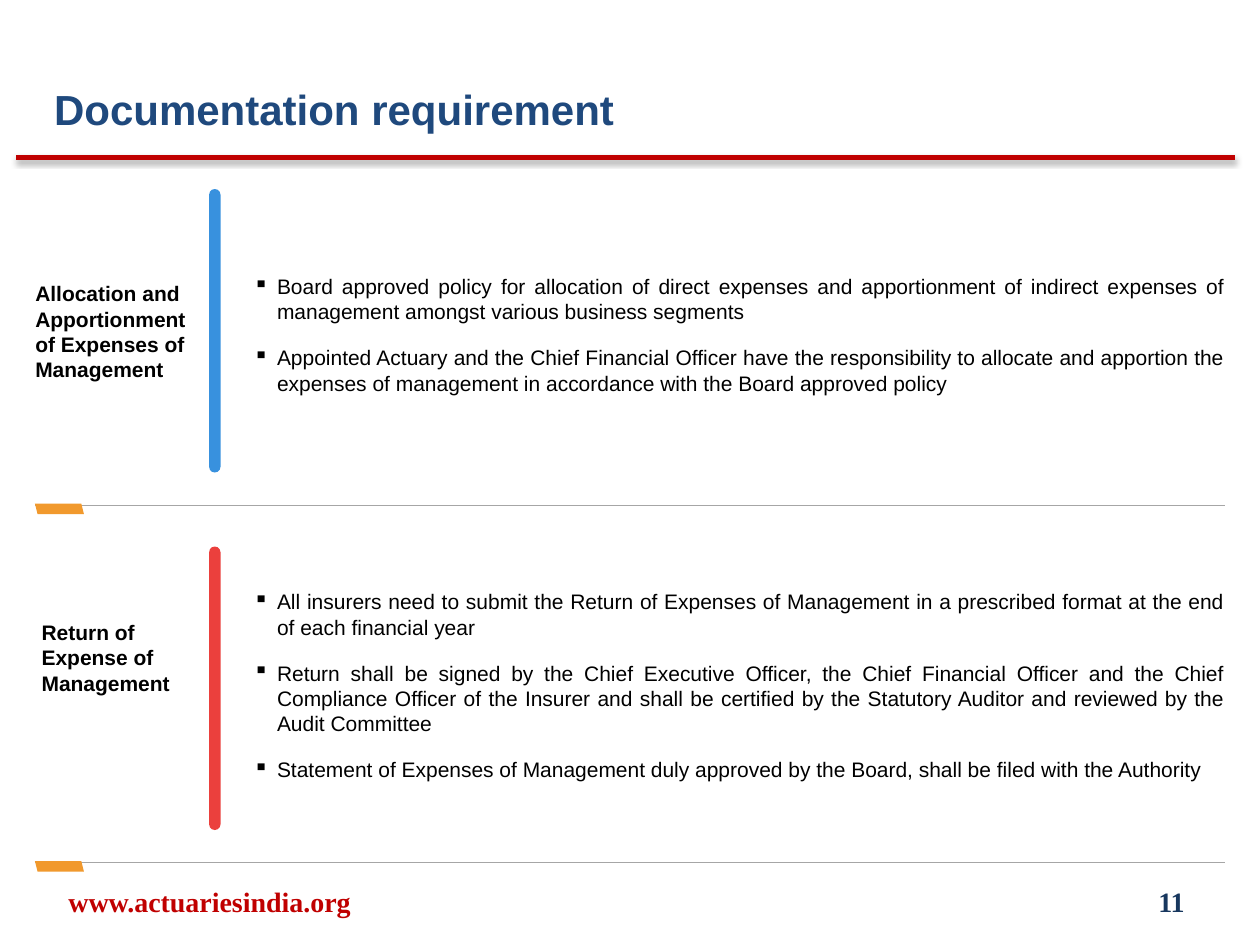
from lxml import etree
from pptx import Presentation
from pptx import util as u
from pptx.dml.color import RGBColor
from pptx.enum import shapes, text
from pptx.oxml import ns

Pt = u.Pt
RED = RGBColor(0xC0, 0x00, 0x00)
NAVY = RGBColor(0x17, 0x37, 0x5E)
TITLE_BLUE = RGBColor(0x1F, 0x49, 0x7D)
BLACK = RGBColor(0x00, 0x00, 0x00)
ORANGE = RGBColor(0xF1, 0x99, 0x2D)
GREY = RGBColor(0xA6, 0xA6, 0xA6)
BLUE_BAR = RGBColor(0x38, 0x91, 0xDE)
RED_BAR = RGBColor(0xEB, 0x40, 0x3D)

SECTION_TOP, SECTION_STEP = 108, 204.3


class Deck:
    FONT = {"name": "Arial", "size": Pt(12), "bold": False}
    BULLET_INDENT = Pt(13.5)

    def __init__(self, width, height):
        self.prs = Presentation()
        self.prs.slide_width, self.prs.slide_height = Pt(width), Pt(height)
        self.slide = self.prs.slides.add_slide(self.prs.slide_layouts[6])

    def words(self, box, paragraphs, color=BLACK, inset=(7.2, 3.6), bullet=None,
              align=text.PP_ALIGN.LEFT, anchor=text.MSO_ANCHOR.TOP, **font):
        """Text box with one or more paragraphs, bulleted on request."""
        frame = self.slide.shapes.add_textbox(*map(Pt, box)).text_frame
        across, down = map(Pt, inset)
        layout = {"word_wrap": True, "vertical_anchor": anchor,
                  "margin_left": across, "margin_right": across,
                  "margin_top": down, "margin_bottom": down}
        for key, value in layout.items():
            setattr(frame, key, value)
        for i, line in enumerate(paragraphs):
            para = frame.add_paragraph() if i else frame.paragraphs[0]
            para.text, para.alignment = line, align
            if bullet:
                self.bullet(para, bullet)
                para.space_before, para.space_after = Pt(6 if i else 0), Pt(6)
            for key, value in {**self.FONT, **font}.items():
                setattr(para.font, key, value)
            para.font.color.rgb = color

    def bullet(self, para, char):
        props = para._p.get_or_add_pPr()
        props.set("marL", str(self.BULLET_INDENT))
        props.set("indent", str(-self.BULLET_INDENT))
        etree.SubElement(props, ns.qn("a:buChar")).set("char", char)

    def line(self, start, end, color, width, shadow=False):
        rule = self.slide.shapes.add_connector(
            shapes.MSO_CONNECTOR.STRAIGHT, *map(Pt, (*start, *end)))
        rule.line.color.rgb, rule.line.width = color, Pt(width)
        effects = etree.SubElement(rule._element.spPr, ns.qn("a:effectLst"))
        if shadow:
            outer = etree.SubElement(effects, ns.qn("a:outerShdw"), blurRad="40000",
                                     dist="20000", dir="5400000", rotWithShape="0")
            black = etree.SubElement(outer, ns.qn("a:srgbClr"), val="000000")
            etree.SubElement(black, ns.qn("a:alpha"), val="38000")

    def shape(self, kind, box, color, adjustments=(), flip=False):
        block = self.slide.shapes.add_shape(kind, *map(Pt, box))
        block.shadow.inherit = False
        block.fill.solid()
        block.fill.fore_color.rgb = color
        block.line.fill.background()
        for i, value in enumerate(adjustments):
            block.adjustments[i] = value
        if flip:
            block._element.spPr.xfrm.set("flipH", "1")

    def section(self, top, bar_color, label, label_box, points, points_box):
        """Bold label, coloured bar, bullet points and the closing rule."""
        self.words(label_box, [label], inset=(5.76, 2.88), bold=True)
        self.shape(shapes.MSO_SHAPE.ROUND_2_SAME_RECTANGLE,
                   (119.5, top, 6.5, 162), bar_color, (0.5, 0.5))
        self.words(points_box, points, inset=(13, 6.5), bullet="▪",
                   align=text.PP_ALIGN.JUSTIFY)
        self.line((700, top + 180.7), (20, top + 180.7), GREY, 0.5)
        self.shape(shapes.MSO_SHAPE.PARALLELOGRAM,
                   (20, top + 179.8, 28, 6), ORANGE, flip=True)


def main():
    deck = Deck(720, 540)

    # Heading
    deck.line((9.4, 90), (705.6, 90), RED, 3, shadow=True)
    deck.words((23.8, 44, 594, 48), ["Documentation requirement"], TITLE_BLUE,
               size=Pt(24), bold=True)

    # Sections
    sections = [
        (BLUE_BAR, "Allocation and Apportionment of Expenses of Management",
         (14.4, 157.7, 106, 64),
         ["Board approved policy for allocation of direct expenses and apportionment "
          "of indirect expenses of management amongst various business segments",
          "Appointed Actuary and the Chief Financial Officer have the responsibility to "
          "allocate and apportion the expenses of management in accordance with the "
          "Board approved policy"],
         (131.8, 149.8, 581.5, 83.5)),
        (RED_BAR, "Return of Expense of Management",
         (18, 351.2, 106, 49.7),
         ["All insurers need to submit the Return of Expenses of Management in a "
          "prescribed format at the end of each financial year",
          "Return shall be signed by the Chief Executive Officer, the Chief Financial "
          "Officer and the Chief Compliance Officer of the Insurer and shall be "
          "certified by the Statutory Auditor and reviewed by the Audit Committee",
          "Statement of Expenses of Management duly approved by the Board, shall be "
          "filed with the Authority"],
         (131.8, 330, 581.5, 124.6)),
    ]
    for i, (bar_color, *content) in enumerate(sections):
        deck.section(SECTION_TOP + i * SECTION_STEP, bar_color, *content)

    # Footer
    footer = {"name": "Times New Roman", "size": Pt(16), "bold": True,
              "anchor": text.MSO_ANCHOR.MIDDLE}
    deck.words((5.8, 500.4, 228, 28.8), ["www.actuariesindia.org"], RED,
               align=text.PP_ALIGN.CENTER, **footer)
    deck.words((516, 500.4, 168, 28.8), ["11"], NAVY,
               align=text.PP_ALIGN.RIGHT, **footer)

    deck.prs.save("out.pptx")


if __name__ == "__main__":
    main()
